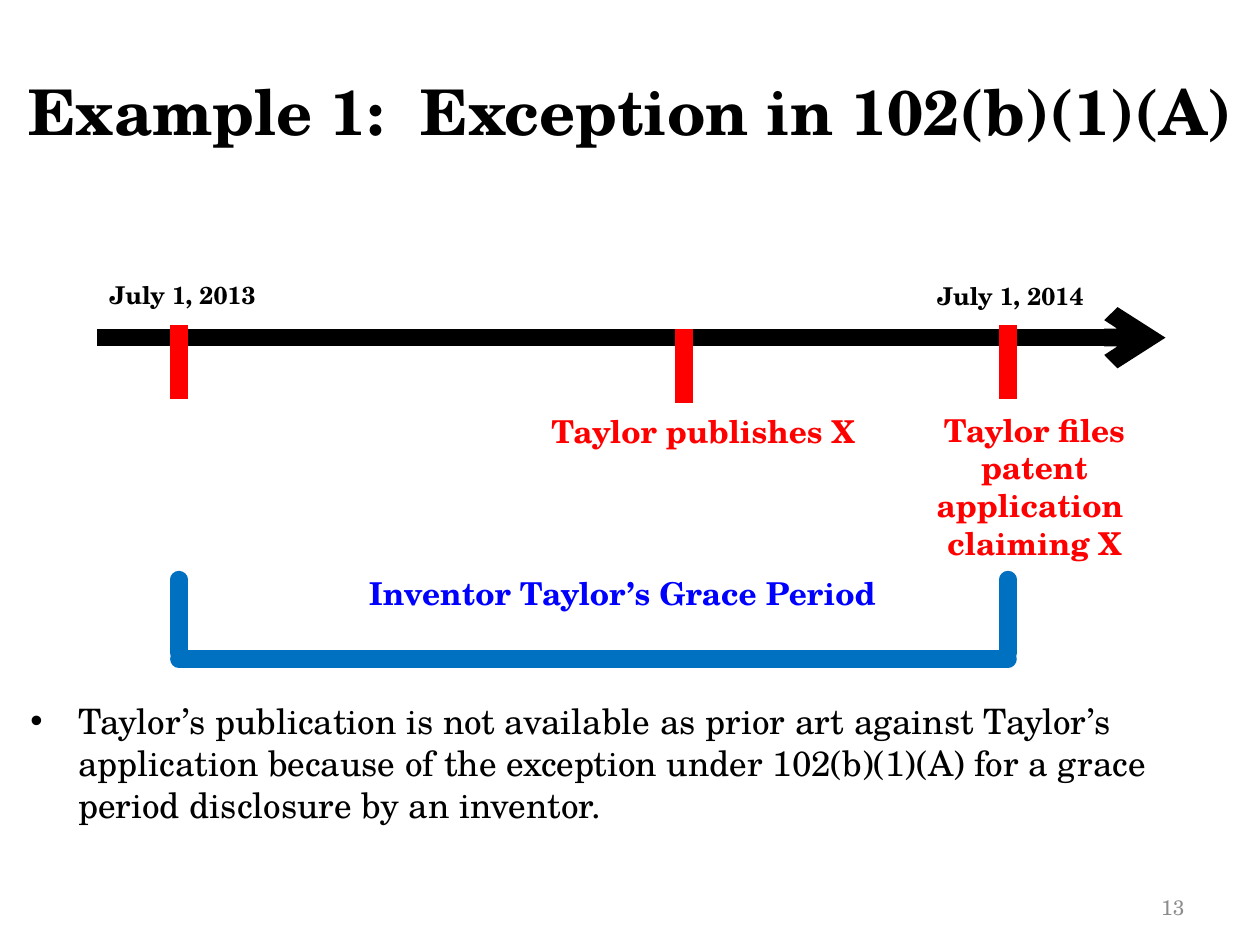
"""Build the grace period timeline slide for the 102(b)(1)(A) exception."""
from lxml import etree
from pptx import Presentation
from pptx.dml.color import RGBColor
from pptx.enum.shapes import MSO_CONNECTOR
from pptx.enum.text import MSO_ANCHOR, MSO_AUTO_SIZE, PP_ALIGN
from pptx.oxml.ns import qn
from pptx.util import Inches, Pt

STRAIGHT = MSO_CONNECTOR.STRAIGHT
TOP, MIDDLE, BOTTOM = MSO_ANCHOR.TOP, MSO_ANCHOR.MIDDLE, MSO_ANCHOR.BOTTOM
LEFT, CENTER, RIGHT = PP_ALIGN.LEFT, PP_ALIGN.CENTER, PP_ALIGN.RIGHT
FONT = "TeX Gyre Schola"
BLACK = RGBColor(0, 0, 0)
RED = RGBColor(0xFF, 0, 0)
BLUE = RGBColor(0, 0, 0xFF)
BRACKET_BLUE = RGBColor(0, 0x70, 0xC0)
GRAY = RGBColor(0x8C, 0x8C, 0x8C)

TITLE = "Example 1:  Exception in 102(b)(1)(A)"
CONCLUSION = (
    "Taylor’s publication is not available as prior art against Taylor’s "
    "application because of the exception under 102(b)(1)(A) for a grace "
    "period disclosure by an inventor."
)
LABELS = [
    ("Taylor publishes X", (4.08, 3.22, 3, 0.4), 18, RED, True, CENTER, TOP),
    ("Taylor files patent application \vclaiming X", (7, 3.21, 2.42, 1.01),
     18, RED, True, CENTER, TOP),
    ("July 1, 2013", (0.77, 2.17, 1.54, 0.34), 14, BLACK, True, LEFT, TOP),
    ("July 1, 2014", (7.34, 2.18, 1.54, 0.34), 14, BLACK, True, LEFT, TOP),
    ("Inventor Taylor’s Grace Period", (2.83, 4.51, 4.33, 0.4),
     18, BLUE, True, LEFT, TOP),
    ("13", (7.17, 6.83, 2.33, 0.52), 12, GRAY, False, RIGHT, BOTTOM),
]
START_X, PUBLISH_X, FILING_X = 1.42, 5.43, 8
AXIS_Y = 2.68
TICKS = [(START_X, 2.58), (FILING_X, 2.58), (PUBLISH_X, 2.61)]
TICK_HEIGHT = 0.59
BRACKET_TOP, BRACKET_SIDE_END, BRACKET_BASE = 4.6, 5.18, 5.23


def place(shape, box):
    shape.left, shape.top, shape.width, shape.height = map(Inches, box)


def fill_text(shape, text, size, color, bold, align, anchor):
    tf = shape.text_frame
    tf.word_wrap = True
    tf.auto_size = MSO_AUTO_SIZE.NONE
    tf.vertical_anchor = anchor
    p = tf.paragraphs[0]
    p.text = text
    p.alignment = align
    p.space_before = Pt(0)
    p.font.name, p.font.size, p.font.bold = FONT, Pt(size), bold
    p.font.color.rgb = color
    return p


def add_line(shapes, x1, y1, x2, y2, color, cap="flat", arrow=False):
    line = shapes.add_connector(STRAIGHT, *map(Inches, (x1, y1, x2, y2)))
    line.line.width = Pt(10)
    line.line.color.rgb = color
    ln = line.line._get_or_add_ln()
    ln.set("cap", cap)
    if arrow:
        etree.SubElement(ln, qn("a:tailEnd"), type="arrow")
    etree.SubElement(line._element.spPr, qn("a:effectLst"))


def main():
    prs = Presentation()
    prs.slide_width, prs.slide_height = Inches(10), Inches(7.5)
    s = prs.slides.add_slide(prs.slide_layouts[1])
    title, body = s.placeholders

    place(title, (0, 0.25, 10, 1.25))
    fill_text(title, TITLE, 36, BLACK, True, CENTER, MIDDLE)
    place(body, (0.14, 5.5, 9.75, 1.08))
    p = fill_text(body, CONCLUSION, 20, BLACK, False, LEFT, TOP)
    pPr = p._p.get_or_add_pPr()
    pPr.set("marL", str(Inches(0.38)))
    pPr.set("indent", str(-Inches(0.38)))

    add_line(s.shapes, 0.77, AXIS_Y, 9.25, AXIS_Y, BLACK, arrow=True)
    for text, box, *style in LABELS:
        fill_text(s.shapes.add_textbox(*map(Inches, box)), text, *style)
    for x, y in TICKS:
        add_line(s.shapes, x, y, x, y + TICK_HEIGHT, RED)

    bracket = s.shapes.add_group_shape().shapes
    for x in (START_X, FILING_X):
        add_line(bracket, x, BRACKET_TOP, x, BRACKET_SIDE_END, BRACKET_BLUE, "rnd")
    add_line(bracket, FILING_X, BRACKET_BASE, START_X, BRACKET_BASE,
             BRACKET_BLUE, "rnd")

    prs.save("out.pptx")


if __name__ == "__main__":
    main()
